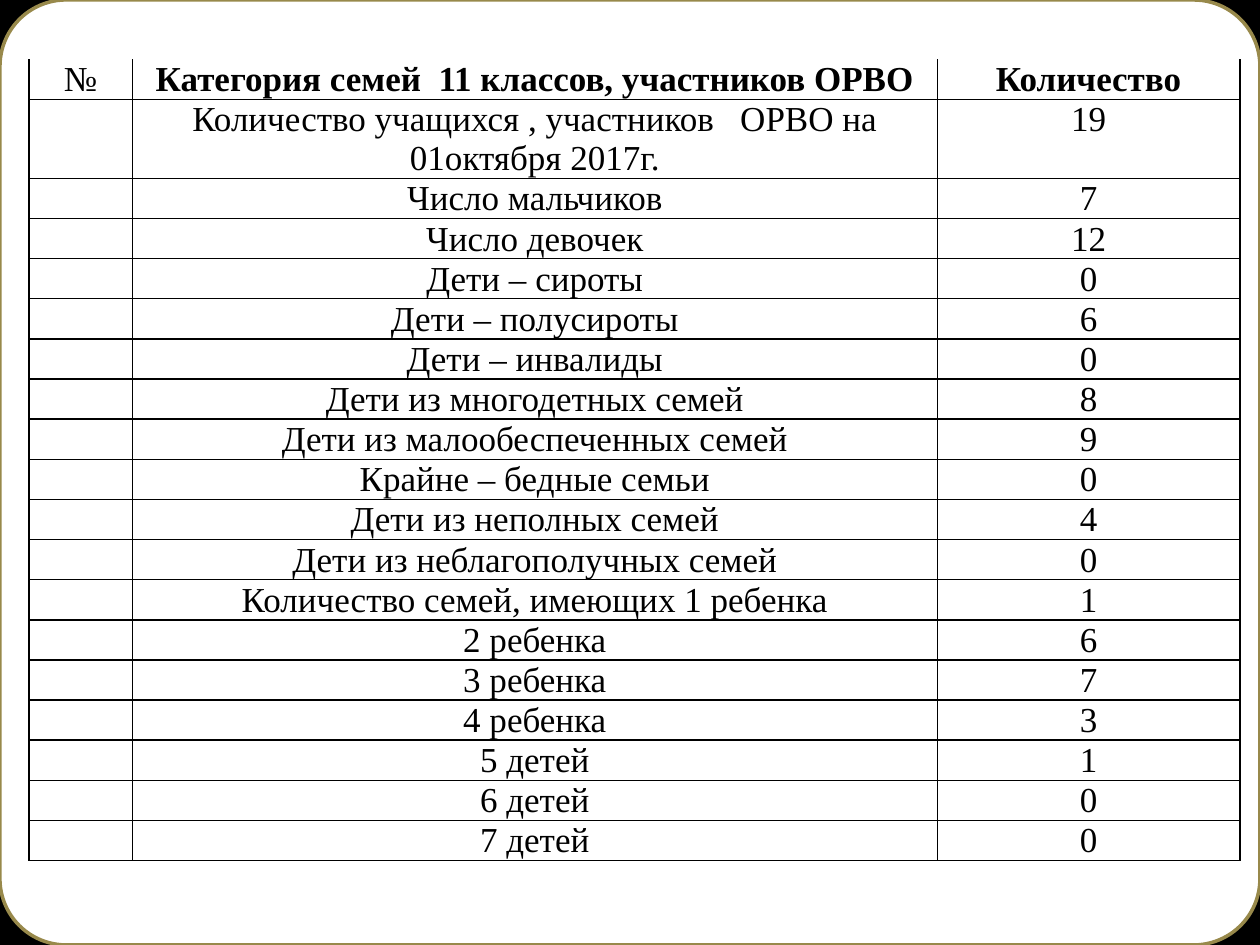
from lxml import etree
from pptx import Presentation
from pptx.dml.color import RGBColor
from pptx.enum.shapes import MSO_SHAPE
from pptx.enum.text import PP_ALIGN
from pptx.oxml.ns import qn
from pptx.util import Inches, Pt

ROUNDED = MSO_SHAPE.ROUNDED_RECTANGLE
CENTER = PP_ALIGN.CENTER
COLORS = {"backdrop": "000000", "panel": "FFFFFF", "frame": "98894B", "ink": "000000"}
NO_GRID_STYLE = "{2D5ABB26-0587-4C30-8999-92F81FD0307C}"
COLUMN_WIDTHS = [0.82, 6.39, 2.4]
MARGINS = {"margin_left": 0.01, "margin_top": 0.01, "margin_right": 0.01, "margin_bottom": 0}
FONT = {"name": "Times New Roman", "size": Pt(20)}
HEADINGS = ["№", "Категория семей  11 классов, участников ОРВО", "Количество"]
CATEGORIES = [
    ("Количество учащихся , участников   ОРВО на 01октября 2017г.", 19),
    ("Число мальчиков", 7),
    ("Число девочек", 12),
    ("Дети – сироты", 0),
    ("Дети – полусироты", 6),
    ("Дети – инвалиды", 0),
    ("Дети из многодетных семей", 8),
    ("Дети из малообеспеченных семей", 9),
    ("Крайне – бедные семьи", 0),
    ("Дети из неполных семей", 4),
    ("Дети из неблагополучных семей", 0),
    ("Количество семей, имеющих 1 ребенка", 1),
    ("2 ребенка", 6),
    ("3 ребенка", 7),
    ("4 ребенка", 3),
    ("5 детей", 1),
    ("6 детей", 0),
    ("7 детей", 0),
]


def add_borders(cell, sides):
    properties = cell._tc.get_or_add_tcPr()
    for position, side in enumerate(sides):
        border = etree.Element(qn(f"a:ln{side}"), w=str(Pt(1)))
        fill = etree.SubElement(border, qn("a:solidFill"))
        etree.SubElement(fill, qn("a:srgbClr"), val=COLORS["ink"])
        properties.insert(position, border)


prs = Presentation()
prs.slide_width, prs.slide_height = Inches(10), Inches(7.5)
slide = prs.slides.add_slide(prs.slide_layouts[6])
slide.background.fill.solid()
slide.background.fill.fore_color.rgb = RGBColor.from_string(COLORS["backdrop"])

panel = slide.shapes.add_shape(ROUNDED, 0, 0, prs.slide_width, prs.slide_height)
panel.adjustments[0] = 0.07
panel.shadow.inherit = False
panel.fill.solid()
panel.fill.fore_color.rgb = RGBColor.from_string(COLORS["panel"])
panel.line.color.rgb = RGBColor.from_string(COLORS["frame"])
panel.line.width = Pt(2)

rows = [HEADINGS] + [["", category, str(count)] for category, count in CATEGORIES]
families = slide.shapes.add_table(
    len(rows), len(COLUMN_WIDTHS), Inches(0.23), Inches(0.47), Inches(9.61), Inches(6.79)
)
grid = families.table
grid.horz_banding = False
grid._tbl.tblPr.find(qn("a:tableStyleId")).text = NO_GRID_STYLE
for column, width in zip(grid.columns, COLUMN_WIDTHS):
    column.width = Inches(width)

for r, values in enumerate(rows):
    grid.rows[r].height = Inches(0.26 if r else 0.23)
    for c, value in enumerate(values):
        cell = grid.cell(r, c)
        for side, margin in MARGINS.items():
            setattr(cell, side, Inches(margin))
        cell.fill.background()
        add_borders(cell, "LRTB" if r else "LRB")
        if value:
            paragraph = cell.text_frame.paragraphs[0]
            paragraph.alignment = CENTER
            entry = paragraph.add_run()
            entry.text = value
            for attribute, setting in FONT.items():
                setattr(entry.font, attribute, setting)
            entry.font.bold = r == 0 and c > 0
            entry.font.color.rgb = RGBColor.from_string(COLORS["ink"])
families.height = Inches(6.79)

prs.save("out.pptx")
